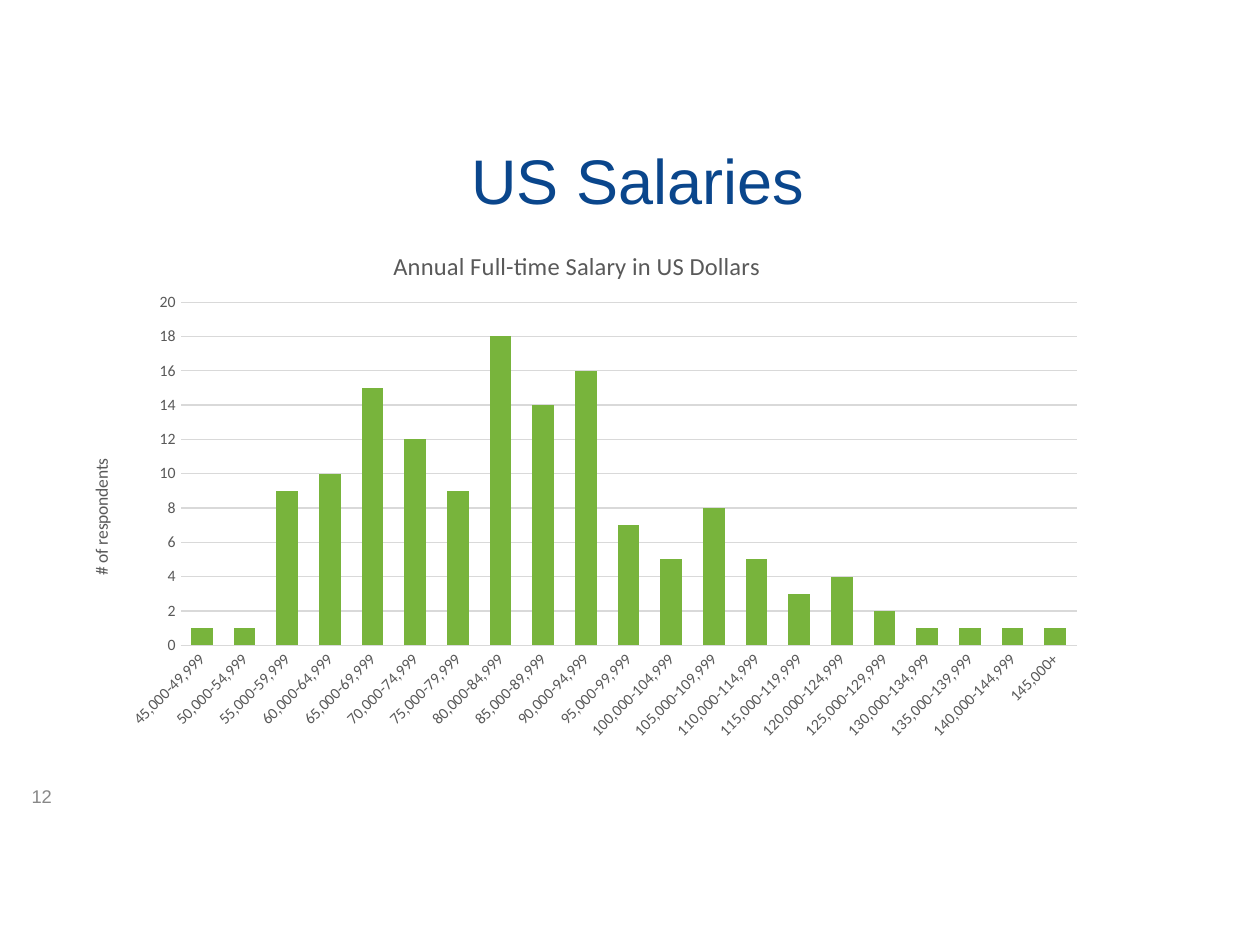
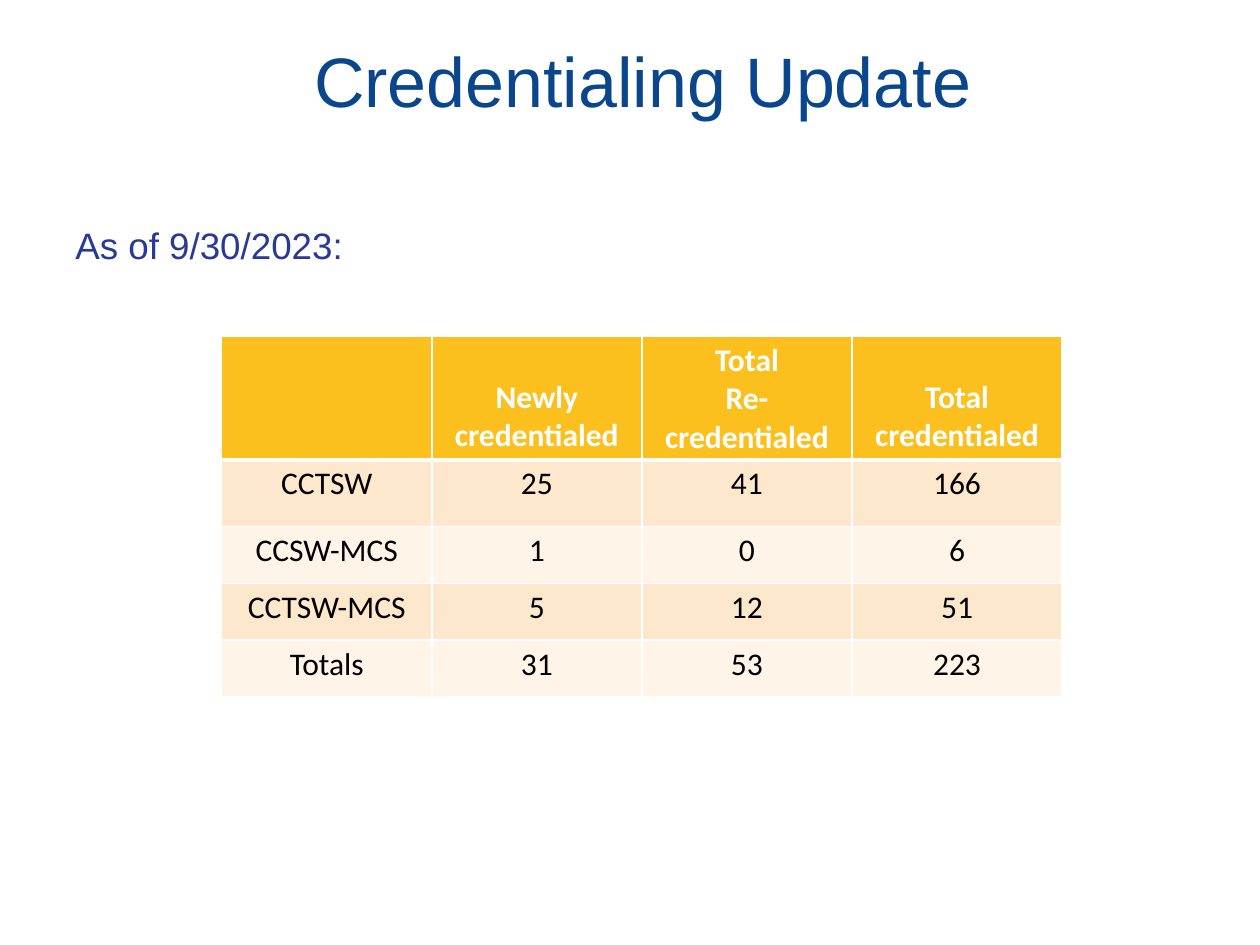
from lxml.etree import SubElement
from pptx import Presentation
from pptx.chart.data import CategoryChartData
from pptx.dml.color import RGBColor
from pptx.enum.chart import XL_CHART_TYPE, XL_TICK_MARK
from pptx.enum.text import MSO_ANCHOR, PP_ALIGN
from pptx.oxml import parse_xml
from pptx.oxml.ns import nsdecls, qn
from pptx.util import Inches, Pt

TITLE_BLUE, BODY_BLUE, PAGE_GREY = "0A468C", "283996", "888888"
CHART_TEXT, CHART_LINE, BAR_GREEN = "595959", "D9D9D9", "78B43C"
HEADER_GOLD, BANDS, WHITE, BLACK = "FBC01E", ("FDE8CD", "FEF4E8"), "FFFFFF", "000000"

COUNTS = [1, 1, 9, 10, 15, 12, 9, 18, 14, 16, 7, 5, 8, 5, 3, 4, 2, 1, 1, 1, 1]
SALARY_BANDS = [f"{k},000-{k + 4},999" for k in range(45, 145, 5)] + ["145,000+"]

CREDENTIALS = [
    ["", "Newly credentialed", "Total\nRe-credentialed", "Total\ncredentialed"],
    ["CCTSW", "25", "41", "166"],
    ["CCSW-MCS", "1", "0", "6"],
    ["CCTSW-MCS", "5", "12", "51"],
    ["Totals", "31", "53", "223"],
]
ROW_HEIGHTS = [0.94, 0.53, 0.45, 0.45, 0.45]


def rgb(value):
    return RGBColor.from_string(value)


def style_font(font, color, **settings):
    font.color.rgb = rgb(color)
    for name, value in settings.items():
        setattr(font, name, value)


def add_text(s, box, text, size, color, align=PP_ALIGN.LEFT,
             anchor=MSO_ANCHOR.MIDDLE, inset=0.1):
    tf = s.shapes.add_textbox(*map(Inches, box)).text_frame
    settings = {"word_wrap": True, "vertical_anchor": anchor,
                "margin_left": Inches(inset), "margin_right": Inches(inset)}
    for name, value in settings.items():
        setattr(tf, name, value)
    p = tf.paragraphs[0]
    p.alignment = align
    r = p.add_run()
    r.text = text
    style_font(r.font, color, size=Pt(size), name="Arial")


def add_title(s, box, text, size):
    add_text(s, box, text, size, TITLE_BLUE, PP_ALIGN.CENTER)


def set_layout(element, index, **fractions):
    """Fix a chart part's place, as fractions of the chart area."""
    for old in element.findall(qn("c:layout")):
        element.remove(old)
    layout = parse_xml(f'<c:layout {nsdecls("c")}><c:manualLayout/></c:layout>')
    settings = {"xMode": "edge", "yMode": "edge", **fractions}
    if "w" in fractions:
        settings = {"layoutTarget": "inner", **settings}
    for name, value in settings.items():
        SubElement(layout[0], qn(f"c:{name}")).set("val", str(value))
    element.insert(index, layout)


def set_chart_title(title, text, size, x, y):
    p = title.text_frame.paragraphs[0]
    r = p.add_run()
    r.text = text
    style_font(r.font, CHART_TEXT, size=Pt(size), name="Calibri", bold=False)
    set_layout(title._element, 1, x=x, y=y)


def rotate_text(element, degrees):
    body = next(element.iter(qn("a:bodyPr")))
    body.set("rot", str(degrees * 60000))
    body.set("vert", "horz")


def set_line(line, color):
    line.color.rgb = rgb(color)
    line.width = Pt(0.75)


def add_salary_chart(s, box):
    data = CategoryChartData()
    data.categories = SALARY_BANDS
    data.add_series("Series 1", COUNTS)
    chart = s.shapes.add_chart(XL_CHART_TYPE.COLUMN_CLUSTERED,
                               *map(Inches, box), data).chart
    chart.has_legend = False
    style_font(chart.font, BLACK, size=Pt(10), name="Calibri")
    chart.has_title = True
    set_chart_title(chart.chart_title, "Annual Full-time Salary in US Dollars",
                    14, 0.32, 0.04)

    plot = chart.plots[0]
    plot.gap_width, plot.overlap, plot.vary_by_categories = 98, -27, False
    fill = plot.series[0].format.fill
    fill.solid()
    fill.fore_color.rgb = rgb(BAR_GREEN)

    cat_axis, val_axis = chart.category_axis, chart.value_axis
    for axis in (cat_axis, val_axis):
        axis.major_tick_mark = axis.minor_tick_mark = XL_TICK_MARK.NONE
        style_font(axis.tick_labels.font, CHART_TEXT, size=Pt(9), name="Calibri")
    set_line(cat_axis.format.line, CHART_LINE)
    rotate_text(cat_axis._element, -45)

    for name, value in {"minimum_scale": 0, "maximum_scale": 20, "major_unit": 2,
                        "has_major_gridlines": True, "has_title": True}.items():
        setattr(val_axis, name, value)
    val_axis.format.line.fill.background()
    set_line(val_axis.major_gridlines.format.line, CHART_LINE)
    set_chart_title(val_axis.axis_title, "# of respondents", 10, 0.03, 0.44)
    rotate_text(val_axis.axis_title._element, -90)
    plot_area = next(chart._chartSpace.iter(qn("c:plotArea")))
    set_layout(plot_area, 0, x=0.12, y=0.15, w=0.86, h=0.65)


def set_borders(cell, **widths):
    for side, width in widths.items():
        cell._tc.get_or_add_tcPr().append(parse_xml(
            f'<a:ln{side} {nsdecls("a")} w="{int(Pt(width))}"><a:solidFill>'
            f'<a:srgbClr val="{WHITE}"/></a:solidFill></a:ln{side}>'))


def fill_cell(cell, text, row):
    header = row == 0
    set_borders(cell, L=1, R=1, T=3 if row == 1 else 1, B=3 if header else 1)
    cell.fill.solid()
    cell.fill.fore_color.rgb = rgb(HEADER_GOLD if header else BANDS[(row - 1) % 2])
    cell.margin_top = cell.margin_bottom = Inches(0.04)
    cell.vertical_anchor = MSO_ANCHOR.BOTTOM if header else MSO_ANCHOR.TOP
    cell.text = text
    for p in cell.text_frame.paragraphs:
        p.alignment = PP_ALIGN.CENTER
        for r in p.runs:
            style_font(r.font, WHITE if header else BLACK, size=Pt(18),
                       name="Calibri", bold=header)


def add_credential_table(s, box):
    n_cols = len(CREDENTIALS[0])
    table = s.shapes.add_table(len(CREDENTIALS), n_cols, *map(Inches, box)).table
    table.horz_banding = False
    for col in table.columns:
        col.width = Inches(box[2] / n_cols)
    for i, (height, texts) in enumerate(zip(ROW_HEIGHTS, CREDENTIALS)):
        table.rows[i].height = Inches(height)
        for j, text in enumerate(texts):
            fill_cell(table.cell(i, j), text, i)


def build_salaries(s):
    add_text(s, (0.21, 6.18, 1.69, 0.28), "12", 10.5, PAGE_GREY, inset=0.04)
    add_title(s, (0.28, 1.07, 9.56, 0.71), "US Salaries", 36)
    add_salary_chart(s, (0.44, 1.77, 8.27, 4.19))


def build_credentialing(s):
    add_title(s, (0.32, 0.17, 9.56, 0.93), "Credentialing Update", 40)
    add_text(s, (0.5, 1.72, 9, 4.5), "As of 9/30/2023:", 21, BODY_BLUE,
             anchor=MSO_ANCHOR.TOP)
    add_credential_table(s, (1.76, 2.67, 6.67, sum(ROW_HEIGHTS)))


def main():
    prs = Presentation()
    prs.slide_width, prs.slide_height = Inches(10), Inches(7.5)
    for build in (build_salaries, build_credentialing):
        build(prs.slides.add_slide(prs.slide_layouts[6]))
    prs.save("out.pptx")


if __name__ == "__main__":
    main()
